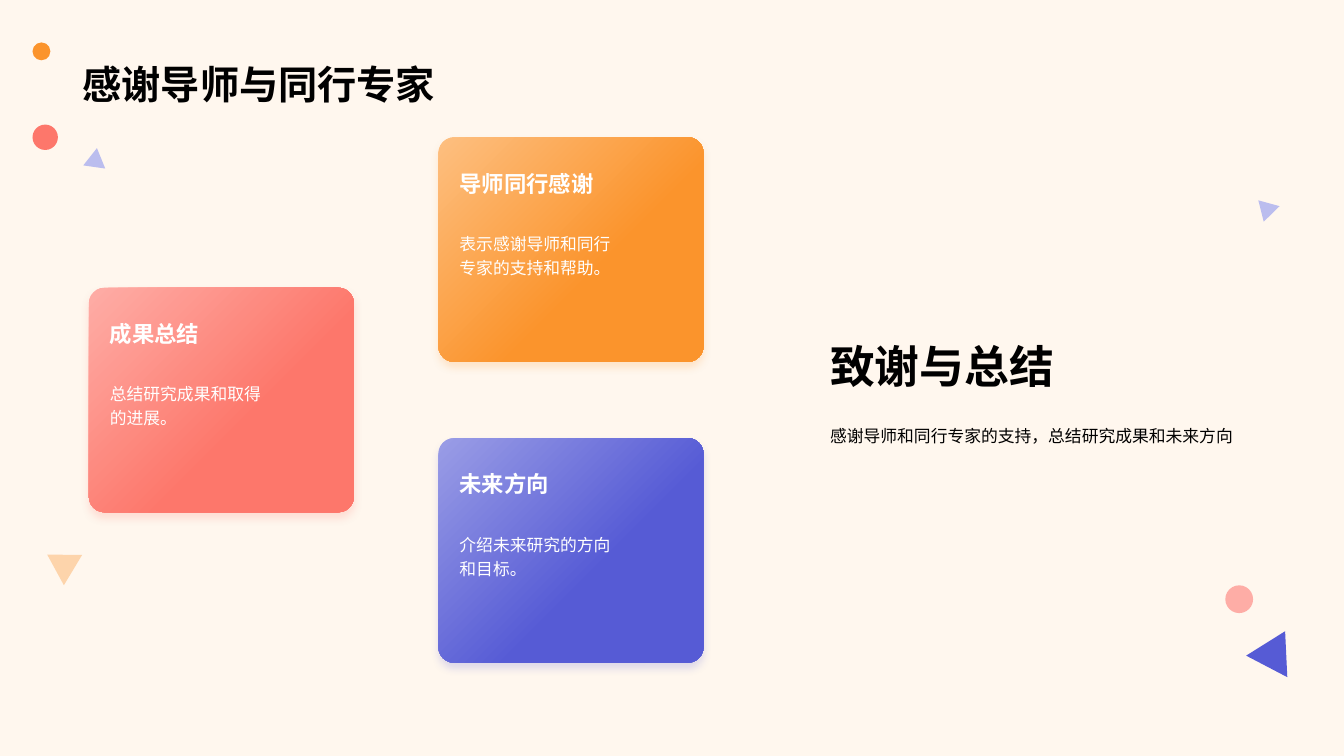
import pptx
import pptx.util
import pptx.dml.color
import pptx.enum.shapes
import pptx.enum.text
import pptx.oxml
import pptx.oxml.ns

Cm, Pt = pptx.util.Cm, pptx.util.Pt
RGBColor = pptx.dml.color.RGBColor
MSO_SHAPE = pptx.enum.shapes.MSO_SHAPE
MSO_ANCHOR = pptx.enum.text.MSO_ANCHOR

FONT = "Arial"
CREAM = RGBColor(0xFF, 0xF7, 0xEE)
BLACK = RGBColor(0x00, 0x00, 0x00)
WHITE = RGBColor(0xFF, 0xFF, 0xFF)
CORAL = RGBColor(0xFD, 0x77, 0x6B)
LIGHT_CORAL = RGBColor(0xFE, 0xAD, 0xA6)
ORANGE = RGBColor(0xFB, 0x94, 0x2C)
LIGHT_ORANGE = RGBColor(0xFD, 0xBF, 0x80)
PALE_ORANGE = RGBColor(0xFD, 0xD4, 0xAB)
INDIGO = RGBColor(0x56, 0x5B, 0xD5)
LIGHT_INDIGO = RGBColor(0x9A, 0x9D, 0xE6)
PALE_INDIGO = RGBColor(0xBB, 0xBD, 0xEE)

# Content
TITLE = "感谢导师与同行专家"
SUMMARY_HEADING = "致谢与总结"
SUMMARY_TEXT = "感谢导师和同行专家的支持，总结研究成果和未来方向"

# Heading, text, column, half-row, light colour, full colour
CARDS = [
    ("成果总结", "总结研究成果和取得的进展。", 0, 1, LIGHT_CORAL, CORAL),
    ("导师同行感谢", "表示感谢导师和同行专家的支持和帮助。", 1, 0, LIGHT_ORANGE, ORANGE),
    ("未来方向", "介绍未来研究的方向和目标。", 1, 2, LIGHT_INDIGO, INDIGO),
]

# Left, top, diameter, colour (cm)
DOTS = [
    (0.82, 3.14, 0.64, CORAL),
    (0.82, 1.07, 0.45, ORANGE),
    (30.88, 14.75, 0.7, LIGHT_CORAL),
]
# Left, top, width, height, rotation, colour (cm, degrees)
TRIANGLES = [
    (31.57, 15.85, 1.17, 1, 27.6, INDIGO),
    (31.6, 4.98, 0.56, 0.48, 315.6, PALE_INDIGO),
    (2.13, 3.73, 0.56, 0.48, 8.2, PALE_INDIGO),
    (1.07, 13.79, 0.89, 0.76, 301.1, PALE_ORANGE),
]

# Card grid (cm)
CARD_LEFT, CARD_TOP = 2.24, 3.46
CARD_WIDTH, CARD_HEIGHT = 6.68, 5.66
COLUMN_STEP, HALF_ROW_STEP = 8.81, 3.79
TEXT_INSET, HEADING_DROP, BODY_DROP = 0.28, 0.68, 2.2

presentation = pptx.Presentation()
presentation.slide_width = Cm(33.87)
presentation.slide_height = Cm(19.05)
slide = presentation.slides.add_slide(presentation.slide_layouts[5])
slide.background.fill.solid()
slide.background.fill.fore_color.rgb = CREAM


def format_text(shape, text, size, color, bold=False, anchor=MSO_ANCHOR.TOP, spacing=1.0):
    frame = shape.text_frame
    frame.text = text
    frame.word_wrap = True
    frame.auto_size = pptx.enum.text.MSO_AUTO_SIZE.NONE
    frame.vertical_anchor = anchor
    paragraph = frame.paragraphs[0]
    paragraph.alignment = pptx.enum.text.PP_ALIGN.LEFT
    paragraph.line_spacing = spacing
    font = paragraph.runs[0].font
    font.name, font.size, font.bold = FONT, Pt(size), bold
    font.color.rgb = color
    east_asian = pptx.oxml.parse_xml(
        f'<a:ea {pptx.oxml.ns.nsdecls("a")} typeface="{FONT}"/>')
    paragraph.runs[0]._r.rPr.find(pptx.oxml.ns.qn("a:latin")).addnext(east_asian)


def add_text(left, top, width, height, *args, **kwargs):
    box = slide.shapes.add_textbox(Cm(left), Cm(top), Cm(width), Cm(height))
    format_text(box, *args, **kwargs)


def add_plain_shape(kind, left, top, width, height):
    shape = slide.shapes.add_shape(kind, Cm(left), Cm(top), Cm(width), Cm(height))
    shape.shadow.inherit = False
    shape.line.fill.background()
    return shape


def add_decoration(kind, left, top, width, height, rotation, color):
    shape = add_plain_shape(kind, left, top, width, height)
    shape.rotation = rotation
    shape.fill.solid()
    shape.fill.fore_color.rgb = color


def add_card(left, top, light, full):
    card = add_plain_shape(MSO_SHAPE.ROUNDED_RECTANGLE, left, top, CARD_WIDTH, CARD_HEIGHT)
    card.adjustments[0] = 0.07
    card.fill.gradient()
    card.fill.gradient_angle = 315
    for stop, position, color in zip(card.fill.gradient_stops, (0, 0.6), (light, full)):
        stop.position = position
        stop.color.rgb = color
    effects = card._element.spPr.find(pptx.oxml.ns.qn("a:effectLst"))
    effects.append(pptx.oxml.parse_xml(
        f'<a:outerShdw {pptx.oxml.ns.nsdecls("a")} blurRad="{Pt(6)}" dist="{Pt(4)}" '
        f'dir="5400000" algn="t" rotWithShape="0"><a:srgbClr val="{full}">'
        '<a:alpha val="20000"/></a:srgbClr></a:outerShdw>'))


# Decorations at the slide edges
for left, top, diameter, color in DOTS:
    add_decoration(MSO_SHAPE.OVAL, left, top, diameter, diameter, 0, color)
for triangle in TRIANGLES:
    add_decoration(MSO_SHAPE.ISOSCELES_TRIANGLE, *triangle)

# Cards
for heading, text, column, half_row, light, full in CARDS:
    left = CARD_LEFT + column * COLUMN_STEP
    top = CARD_TOP + half_row * HALF_ROW_STEP
    add_card(left, top, light, full)
    add_text(left + TEXT_INSET, top + BODY_DROP, 4.62, 1.42, text, 12, WHITE, spacing=1.2)
    add_text(left + TEXT_INSET, top + HEADING_DROP, 5.87, 0.94, heading, 16, WHITE,
             bold=True, anchor=MSO_ANCHOR.BOTTOM)

# Summary on the right
add_text(20.67, 10.49, 10.95, 0.82, SUMMARY_TEXT, 12, BLACK, spacing=1.2)
add_text(20.67, 8.4, 8.92, 1.62, SUMMARY_HEADING, 32, BLACK, bold=True)

# Title
title = slide.shapes.title
title.left, title.top, title.width, title.height = Cm(1.83), Cm(0), Cm(30.18), Cm(2.84)
format_text(title, TITLE, 28, BLACK, bold=True, anchor=MSO_ANCHOR.BOTTOM)

presentation.save("out.pptx")
